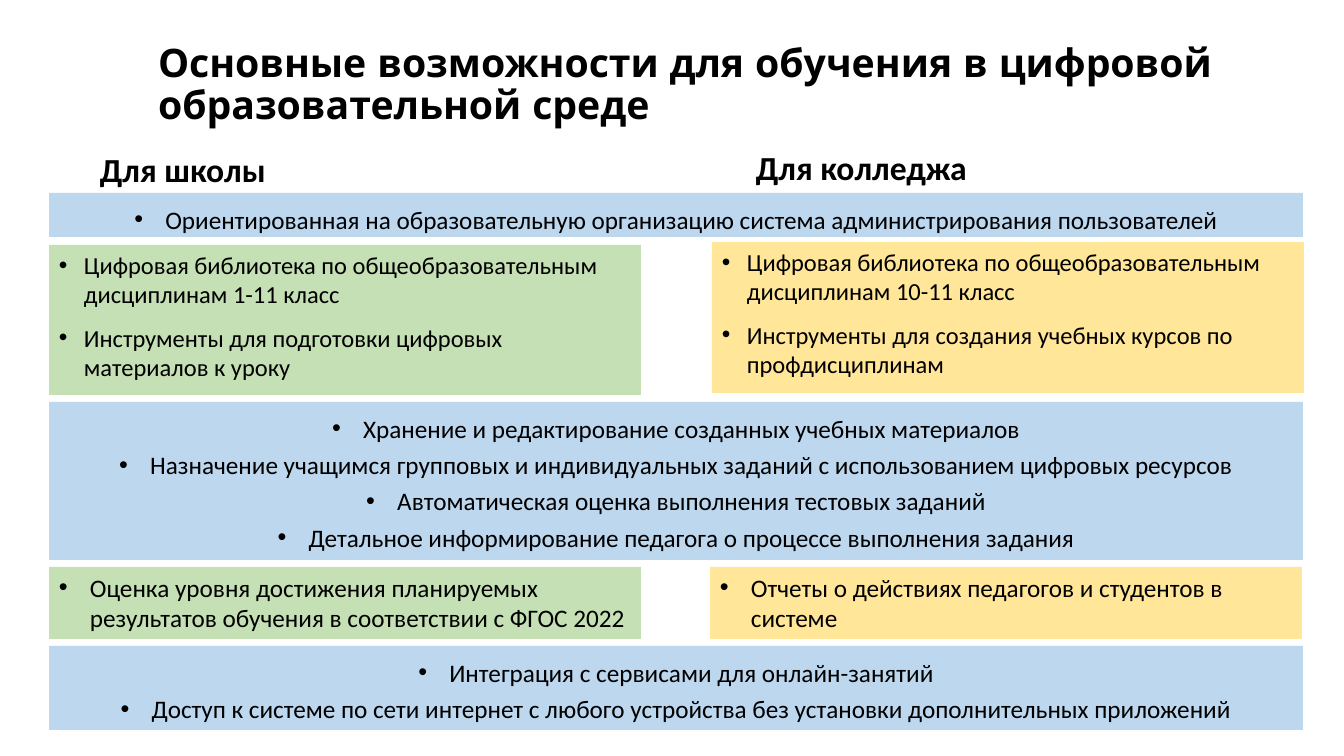
from lxml import etree
from pptx import Presentation
from pptx import util as u
from pptx.dml.color import RGBColor
from pptx.enum import shapes, text
from pptx.oxml.ns import qn

PX = 9071
COLORS = {"school": "C5E0B4", "college": "FFE699", "common": "BDD7EE", "text": "000000"}
LEFT, RIGHT = 49, 712
COLUMN, FULL = 592, 1254


def px(*lengths):
    return [u.Emu(length * PX) for length in lengths]


def write(shape, lines, size=18, font="Calibri", bold=False, align=text.PP_ALIGN.LEFT,
          anchor=text.MSO_ANCHOR.TOP, spacing=1.0, gap=0, indent=0):
    frame = shape.text_frame
    frame.word_wrap = True
    frame.auto_size = text.MSO_AUTO_SIZE.NONE
    frame.vertical_anchor = anchor
    for index, line in enumerate(lines):
        paragraph = frame.add_paragraph() if index else frame.paragraphs[0]
        paragraph.text = line
        paragraph.alignment = align
        paragraph.line_spacing = spacing
        paragraph.space_before = u.Pt(gap if index else 0)
        if indent:
            properties = paragraph._p.get_or_add_pPr()
            properties.set("marL", str(indent * PX))
            properties.set("indent", str(-indent * PX))
            etree.SubElement(properties, qn("a:buFont"), typeface="Arial")
            etree.SubElement(properties, qn("a:buChar"), char="•")
        paragraph.font.name = font
        paragraph.font.size = u.Pt(size)
        paragraph.font.bold = bold
        paragraph.font.color.rgb = RGBColor.from_string(COLORS["text"])


presentation = Presentation()
presentation.slide_width, presentation.slide_height = px(1344, 756)
slide = presentation.slides.add_slide(presentation.slide_layouts[5])

title = slide.shapes.title
title.left, title.top, title.width, title.height = px(148, 13, 1104, 146)
write(title, ["Основные возможности для обучения в цифровой образовательной среде"],
      size=28, font="Quicksand", bold=True, anchor=text.MSO_ANCHOR.MIDDLE, spacing=0.9)

for heading, left, top in [("Для школы", 90, 104), ("Для колледжа", 746, 102)]:
    box = slide.shapes.add_textbox(*px(left, top, 570, 91))
    write(box, [heading], size=24, bold=True, anchor=text.MSO_ANCHOR.BOTTOM, spacing=0.9)

centred = {"align": text.PP_ALIGN.CENTER, "spacing": 1.2, "indent": 31}
library = {"size": 17.5, "gap": 10, "indent": 25}
report = {"indent": 31}

panels = [
    ("common", LEFT, 193, FULL, 44, centred, [
        "Ориентированная на образовательную организацию система администрирования пользователей"]),
    ("school", LEFT, 245, COLUMN, 150, library, [
        "Цифровая библиотека по общеобразовательным дисциплинам 1-11 класс",
        "Инструменты для подготовки цифровых материалов к уроку"]),
    ("college", RIGHT, 242, COLUMN, 151, library, [
        "Цифровая библиотека по общеобразовательным дисциплинам 10-11 класс",
        "Инструменты для создания учебных курсов по профдисциплинам"]),
    ("common", LEFT, 402, FULL, 158, centred, [
        "Хранение и редактирование созданных учебных материалов",
        "Назначение учащимся групповых и индивидуальных заданий с использованием цифровых ресурсов",
        "Автоматическая оценка выполнения тестовых заданий",
        "Детальное информирование педагога о процессе выполнения задания"]),
    ("school", LEFT, 567, COLUMN, 72, report, [
        "Оценка уровня достижения планируемых результатов обучения в соответствии с ФГОС 2022"]),
    ("college", RIGHT - 2, 567, COLUMN, 72, report, [
        "Отчеты о действиях педагогов и студентов в системе"]),
    ("common", LEFT, 646, FULL, 84, centred, [
        "Интеграция с сервисами для онлайн-занятий",
        "Доступ к системе по сети интернет с любого устройства без установки дополнительных приложений"]),
]
for audience, left, top, width, height, style, lines in panels:
    panel = slide.shapes.add_shape(shapes.MSO_SHAPE.RECTANGLE, *px(left, top, width, height))
    panel.shadow.inherit = False
    panel.fill.solid()
    panel.fill.fore_color.rgb = RGBColor.from_string(COLORS[audience])
    panel.line.fill.background()
    write(panel, lines, **style)

presentation.save("out.pptx")
